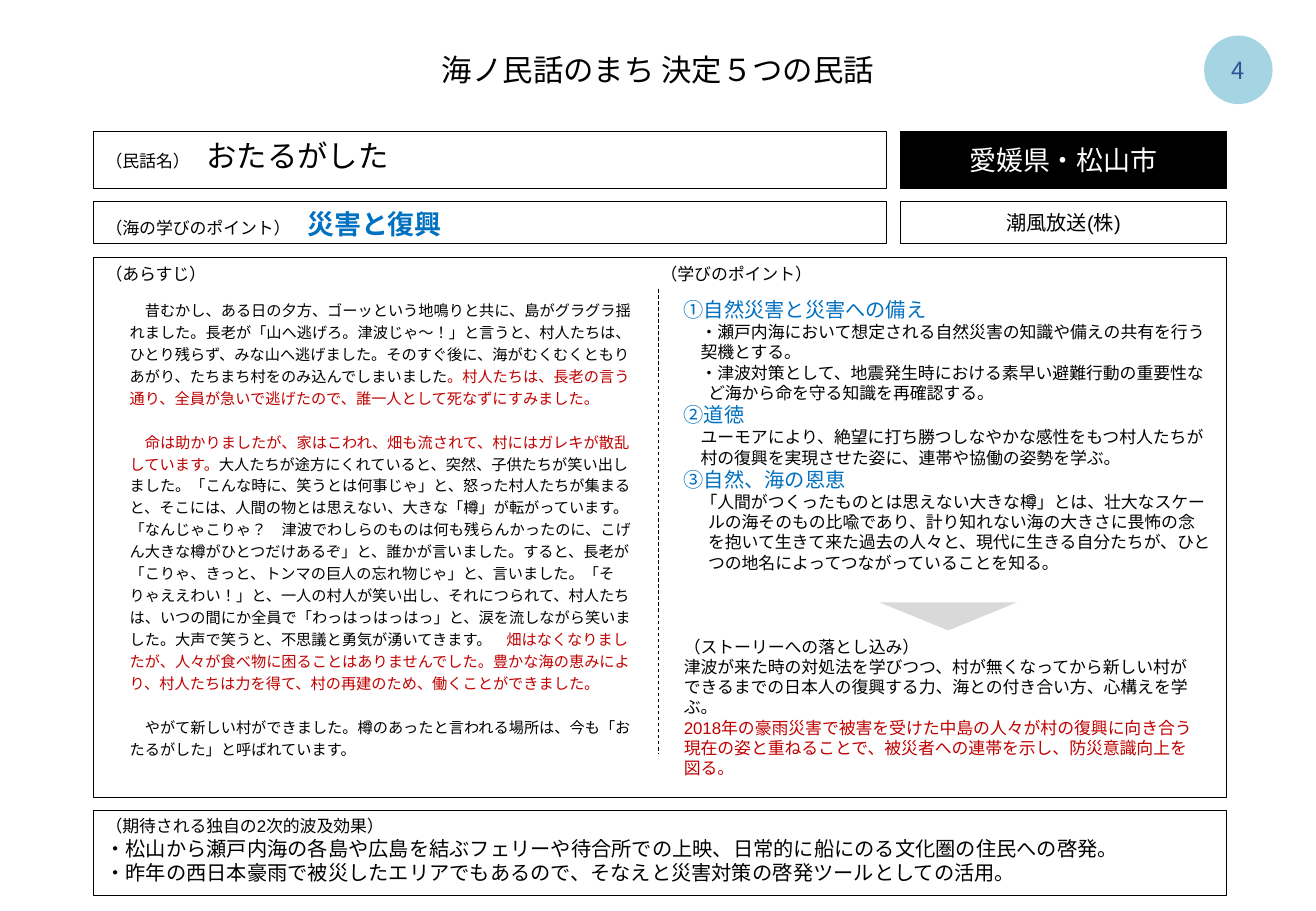
from lxml.etree import SubElement
from pptx import Presentation
from pptx.dml.color import RGBColor
from pptx.enum.dml import MSO_LINE
from pptx.enum.lang import MSO_LANGUAGE_ID as Language
from pptx.enum.shapes import MSO_CONNECTOR as Connector, MSO_SHAPE as Shape
from pptx.enum.text import MSO_ANCHOR as Anchor, PP_ALIGN as Align
from pptx.oxml.ns import qn
from pptx.util import Pt

BLACK = RGBColor(0, 0, 0)
WHITE = RGBColor(255, 255, 255)
RED = RGBColor(0xC0, 0, 0)
BLUE = RGBColor(0, 0x70, 0xC0)
NAVY = RGBColor(0x2F, 0x55, 0x97)
AQUA = RGBColor(0xA5, 0xD4, 0xE2)
GREY = RGBColor(0xD9, 0xD9, 0xD9)

LEFT, FULL_WIDTH = 55.5, 671.7
NAME_WIDTH, SIDE_WIDTH = 470, 193.7
SIDE_LEFT = LEFT + FULL_WIDTH - SIDE_WIDTH

STORY = [
    [("　昔むかし、ある日の夕方、ゴーッという地鳴りと共に、島がグラグラ揺れました。長老が「山へ逃げろ。"
      "津波じゃ～！」と言うと、村人たちは、ひとり残らず、みな山へ逃げました。そのすぐ後に、海がむくむくと"
      "もりあがり、たちまち村をのみ込んでしまいました", BLACK),
     ("。村人たちは、長老の言う通り、全員が急いで逃げたので、誰一人として死なずにすみました。", RED)],
    [("　命は助かりましたが、家はこわれ、畑も流されて、村にはガレキが散乱しています。", RED),
     ("大人たちが途方にくれていると、突然、子供たちが笑い出しました。「こんな時に、笑うとは何事じゃ」と、"
      "怒った村人たちが集まると、そこには、人間の物とは思えない、大きな「樽」が転がっています。"
      "「なんじゃこりゃ？　津波でわしらのものは何も残らんかったのに、こげん大きな樽がひとつだけあるぞ」と、"
      "誰かが言いました。すると、長老が「こりゃ、きっと、トンマの巨人の忘れ物じゃ」と、言いました。"
      "「そりゃええわい！」と、一人の村人が笑い出し、それにつられて、村人たちは、いつの間にか全員で"
      "「わっはっはっはっ」と、涙を流しながら笑いました。大声で笑うと、不思議と勇気が湧いてきます。　", BLACK),
     ("畑はなくなりましたが、人々が食べ物に困ることはありませんでした。豊かな海の恵みにより、"
      "村人たちは力を得て、村の再建のため、働くことができました。", RED)],
    [("　やがて新しい村ができました。樽のあったと言われる場所は、今も「おたるがした」と呼ばれています。", BLACK)],
]
LESSONS = [
    ("①自然災害と災害への備え", [
        "　・瀬戸内海において想定される自然災害の知識や備えの共有を行う",
        "　契機とする。",
        "　・津波対策として、地震発生時における素早い避難行動の重要性など海から命を守る知識を再確認する。"]),
    ("②道徳", [
        "　ユーモアにより、絶望に打ち勝つしなやかな感性をもつ村人たちが",
        "　村の復興を実現させた姿に、連帯や協働の姿勢を学ぶ。"]),
    ("③自然、海の恩恵", [
        "　「人間がつくったものとは思えない大きな樽」とは、壮大なスケールの海そのもの比喩であり、"
        "計り知れない海の大きさに畏怖の念を抱いて生きて来た過去の人々と、現代に生きる自分たちが、"
        "ひとつの地名によってつながっていることを知る。"]),
]
STORY_LINK = [
    ("（ストーリーへの落とし込み）", BLACK),
    ("津波が来た時の対処法を学びつつ、村が無くなってから新しい村ができるまでの日本人の復興する力、"
     "海との付き合い方、心構えを学ぶ。", BLACK),
    ("2018年の豪雨災害で被害を受けた中島の人々が村の復興に向き合う現在の姿と重ねることで、"
     "被災者への連帯を示し、防災意識向上を図る。", RED),
]
EFFECTS = [
    "・松山から瀬戸内海の各島や広島を結ぶフェリーや待合所での上映、日常的に船にのる文化圏の住民への啓発。",
    "・昨年の西日本豪雨で被災したエリアでもあるので、そなえと災害対策の啓発ツールとしての活用。",
]


def add_para(box, size, text="", color=BLACK, face="Arial", align=Align.LEFT, leading=1.2):
    """Fill the first empty paragraph of the box, or append one."""
    frame = box.text_frame
    para = frame.paragraphs[-1]
    if para.runs:
        para = frame.add_paragraph()
    para.alignment = align
    para.line_spacing = Pt(round(size * leading, 1))
    font = para.font
    font.size, font.name, font.language_id = Pt(size), face, Language.JAPANESE
    font.color.rgb = color
    SubElement(para._p.pPr.find(qn("a:defRPr")), qn("a:ea"), typeface=face)
    if text:
        para.add_run().text = text
    return para


def add_span(para, text, color=None, size=None, bold=None):
    span = para.add_run()
    span.text = text
    span.font.bold = bold
    if color is not None:
        span.font.color.rgb = color
    if size:
        span.font.size = Pt(size)


def add_text_box(page, left, top, width, height, anchor=Anchor.TOP):
    box = page.shapes.add_textbox(Pt(left), Pt(top), Pt(width), Pt(height))
    box.text_frame.word_wrap = True
    box.text_frame.vertical_anchor = anchor
    return box


def add_block(page, kind, left, top, width, height, fill=None, line=None, weight=0.5, anchor=Anchor.TOP):
    block = page.shapes.add_shape(kind, Pt(left), Pt(top), Pt(width), Pt(height))
    block.shadow.inherit = False
    if fill is None:
        block.fill.background()
    else:
        block.fill.solid()
        block.fill.fore_color.rgb = fill
    if line is None:
        block.line.fill.background()
    else:
        block.line.color.rgb = line
        block.line.width = Pt(weight)
    block.text_frame.vertical_anchor = anchor
    return block


def add_header(page, width):
    title = add_text_box(page, 0, 26.6, width, 29, Anchor.MIDDLE)
    add_para(title, 18, "海ノ民話のまち 決定５つの民話", face="Calibri", align=Align.CENTER)
    badge = add_block(page, Shape.OVAL, 714.2, 21.6, 39.6, 39.6, AQUA, AQUA, 1, Anchor.MIDDLE)
    add_para(badge, 14, "4", NAVY, "Noto Sans CJK JP", Align.CENTER)


def add_info_row(page, top, height, label, value, value_style, side, side_size, side_fill, side_color):
    """Labelled value on the left, centred cell on the right."""
    name = add_block(page, Shape.RECTANGLE, LEFT, top, NAME_WIDTH, height, line=BLACK)
    para = add_para(name, value_style["size"])
    add_span(para, label + "　", size=10)
    add_span(para, value, **value_style)
    cell = add_block(page, Shape.RECTANGLE, SIDE_LEFT, top, SIDE_WIDTH, height,
                     side_fill, BLACK, anchor=Anchor.MIDDLE)
    add_para(cell, side_size, side, side_color, align=Align.CENTER)


def add_story(page, left, top, width, height):
    box = add_text_box(page, left, top, width, height)
    for number, spans in enumerate(STORY):
        para = add_para(box, 9, leading=1.44)
        if number:
            para.space_before = Pt(13)
        for text, color in spans:
            add_span(para, text, color)


def add_lessons(page, left, top, width, height):
    box = add_text_box(page, left, top, width, height)
    for heading, lines in LESSONS:
        paras = [add_para(box, 12, heading, BLUE)]
        paras += [add_para(box, 10, line) for line in lines]
        for para in paras:
            para._p.pPr.set("marL", str(Pt(14.4)))
            para._p.pPr.set("indent", str(Pt(-14.4)))


def add_main_panel(page, left, top, width, height):
    panel = add_block(page, Shape.RECTANGLE, left, top, width, height, line=BLACK)
    para = add_para(panel, 10, "（あらすじ）\t（学びのポイント）")
    tabs = para._p.pPr.makeelement(qn("a:tabLst"), {})
    SubElement(tabs, qn("a:tab"), pos=str(Pt(329)), algn="l")
    para._p.pPr.find(qn("a:defRPr")).addprevious(tabs)

    add_story(page, left + 14.3, top + 20.2, 311.8, 281.5)
    right = left + 342.7
    add_lessons(page, right, top + 20.2, 326.2, 172)
    arrow = add_block(page, Shape.ISOSCELES_TRIANGLE, left + 465.8, top + 204.5, 81.4, 16.6, GREY)
    arrow.rotation = 180
    link = add_text_box(page, right, top + 221.1, 320.4, 92)
    for text, color in STORY_LINK:
        add_para(link, 10, text, color)

    middle = Pt(left + 334.7)
    divider = page.shapes.add_connector(Connector.STRAIGHT, middle, Pt(top + 18.8), middle, Pt(top + 294.5))
    divider.line.color.rgb = BLACK
    divider.line.width = Pt(0.5)
    divider.line.dash_style = MSO_LINE.DASH
    SubElement(divider._element.spPr, qn("a:effectLst"))


def add_effects(page, left, top, width, height):
    box = add_block(page, Shape.RECTANGLE, left, top, width, height, line=BLACK)
    add_para(box, 10, "（期待される独自の2次的波及効果）")
    for line in EFFECTS:
        add_para(box, 12, line)


def main():
    deck = Presentation()
    deck.slide_width, deck.slide_height = Pt(780), Pt(540)
    page = deck.slides.add_slide(deck.slide_layouts[6])
    add_header(page, 780)
    add_info_row(page, 77.8, 33.8, "（民話名）", "おたるがした", {"size": 18},
                 "愛媛県・松山市", 16, BLACK, WHITE)
    add_info_row(page, 119.5, 25, "（海の学びのポイント）", "災害と復興",
                 {"size": 16, "color": BLUE, "bold": True}, "潮風放送(株)", 12, None, BLACK)
    add_main_panel(page, LEFT, 152.6, FULL_WIDTH, 320.4)
    add_effects(page, LEFT, 480.2, FULL_WIDTH, 50.4)
    deck.save("out.pptx")


if __name__ == "__main__":
    main()
